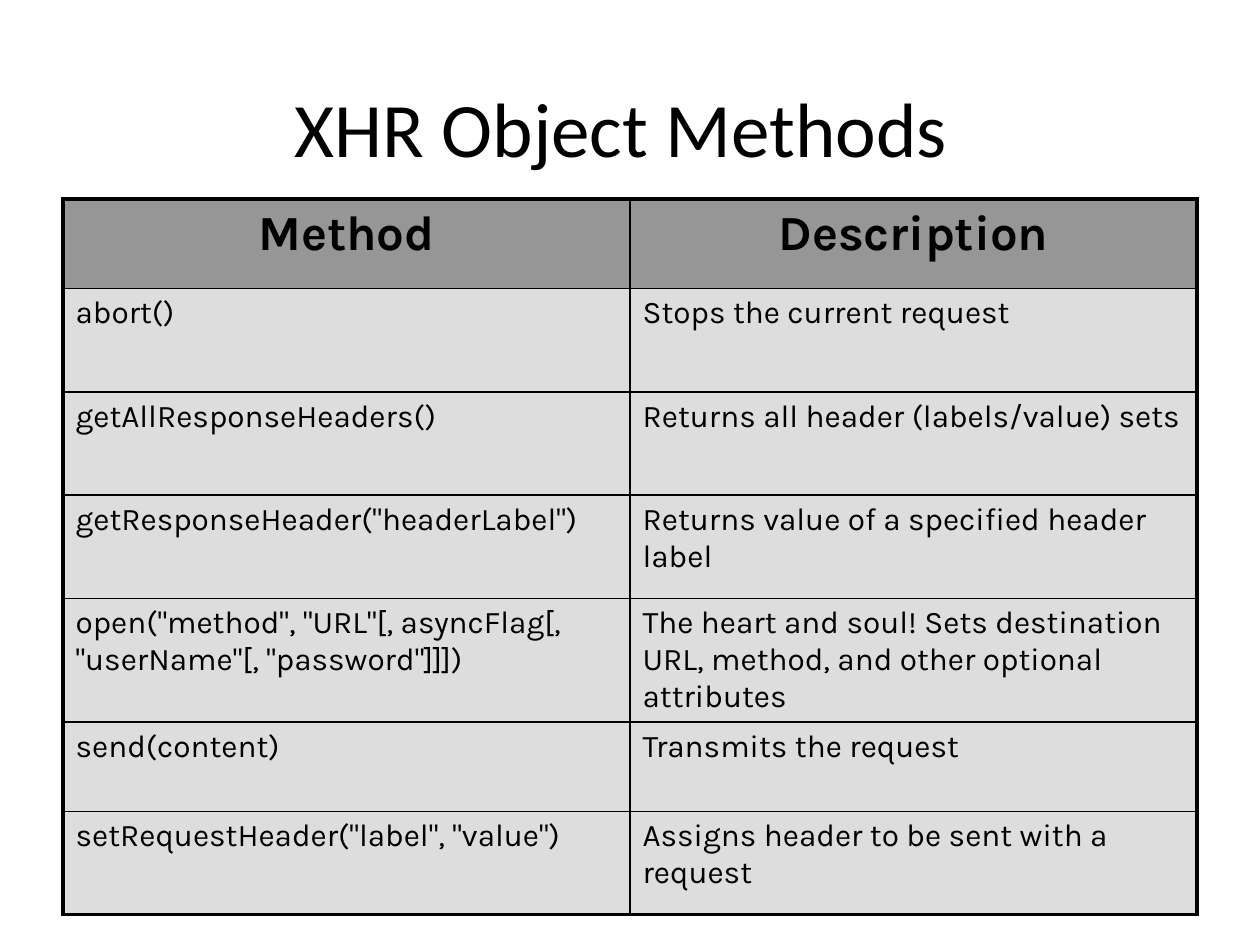
from dataclasses import dataclass
from lxml.etree import SubElement
from pptx import Presentation
from pptx.dml.color import RGBColor
from pptx.enum.text import MSO_ANCHOR as Anchor, PP_ALIGN as Align
from pptx.oxml.ns import qn
from pptx.util import Inches, Pt

BLACK = RGBColor(0, 0, 0)
DARK = RGBColor(0x96, 0x96, 0x96)
LIGHT = RGBColor(0xDD, 0xDD, 0xDD)
THIN, THICK = Pt(1), Pt(2.25)
HEAD = {"name": "Karla", "size": Pt(28), "bold": True}
BODY = {"name": "Karla", "size": Pt(18), "bold": False}
TITLE = {"name": "Calibri", "size": Pt(44), "bold": False}


@dataclass
class Row:
    method: str
    about: str
    height: float = 0.82
    head: bool = False


ROWS = [
    Row("Method", "Description", 0.71, True),
    Row("abort()", "Stops the current request"),
    Row("getAllResponseHeaders()", "Returns all header (labels/value) sets"),
    Row('getResponseHeader("headerLabel")', "Returns value of a specified header label"),
    Row('open("method", "URL"[, asyncFlag[, "userName"[, "password"]]])',
        "The heart and soul! Sets destination URL, method, and other optional attributes", 0.98),
    Row("send(content)", "Transmits the request", 0.71),
    Row('setRequestHeader("label", "value")', "Assigns header to be sent with a request"),
]


def write(frame, text: str, style: dict, align) -> None:
    para = frame.paragraphs[0]
    para.alignment = align
    run = para.add_run()
    run.text = text
    run.font.color.rgb = BLACK
    for key, value in style.items():
        setattr(run.font, key, value)


def space(cell) -> None:
    para = cell.text_frame.paragraphs[0]
    para.space_before = Pt(0)
    gap = para._p.pPr.find(qn("a:spcBef"))
    gap.remove(gap[0])
    SubElement(gap, qn("a:spcPct"), val="20000")


def border(cell, edges: dict) -> None:
    props = cell._tc.get_or_add_tcPr()
    for side, outer in edges.items():
        line = SubElement(props, qn(f"a:ln{side}"), w=str(THICK if outer else THIN))
        fill = SubElement(line, qn("a:solidFill"))
        SubElement(fill, qn("a:srgbClr"), val=str(BLACK))


def draw(slide, rows: list[Row]) -> None:
    total = sum(row.height for row in rows)
    frame = slide.shapes.add_table(
        len(rows), 2, Inches(0.5), Inches(1.58), Inches(9), Inches(total))
    table = frame.table
    table.horz_banding = False
    last = len(rows) - 1
    for i, row in enumerate(rows):
        table.rows[i].height = Inches(row.height)
        for j, text in enumerate((row.method, row.about)):
            cell = table.cell(i, j)
            border(cell, {"L": j == 0, "R": j == 1, "T": i == 0, "B": i == last})
            cell.fill.solid()
            cell.fill.fore_color.rgb = DARK if row.head else LIGHT
            style, align = (HEAD, Align.CENTER) if row.head else (BODY, Align.LEFT)
            write(cell.text_frame, text, style, align)
            space(cell)


def main() -> None:
    deck = Presentation()
    deck.slide_width, deck.slide_height = Inches(10), Inches(7.5)
    slide = deck.slides.add_slide(deck.slide_layouts[5])
    title = slide.shapes.title
    place = {"left": 0.5, "top": 0.25, "width": 9, "height": 1.51}
    for key, value in place.items():
        setattr(title, key, Inches(value))
    title.text_frame.vertical_anchor = Anchor.MIDDLE
    write(title.text_frame, "XHR Object Methods ", TITLE, Align.CENTER)
    draw(slide, ROWS)
    deck.save("out.pptx")


if __name__ == "__main__":
    main()
